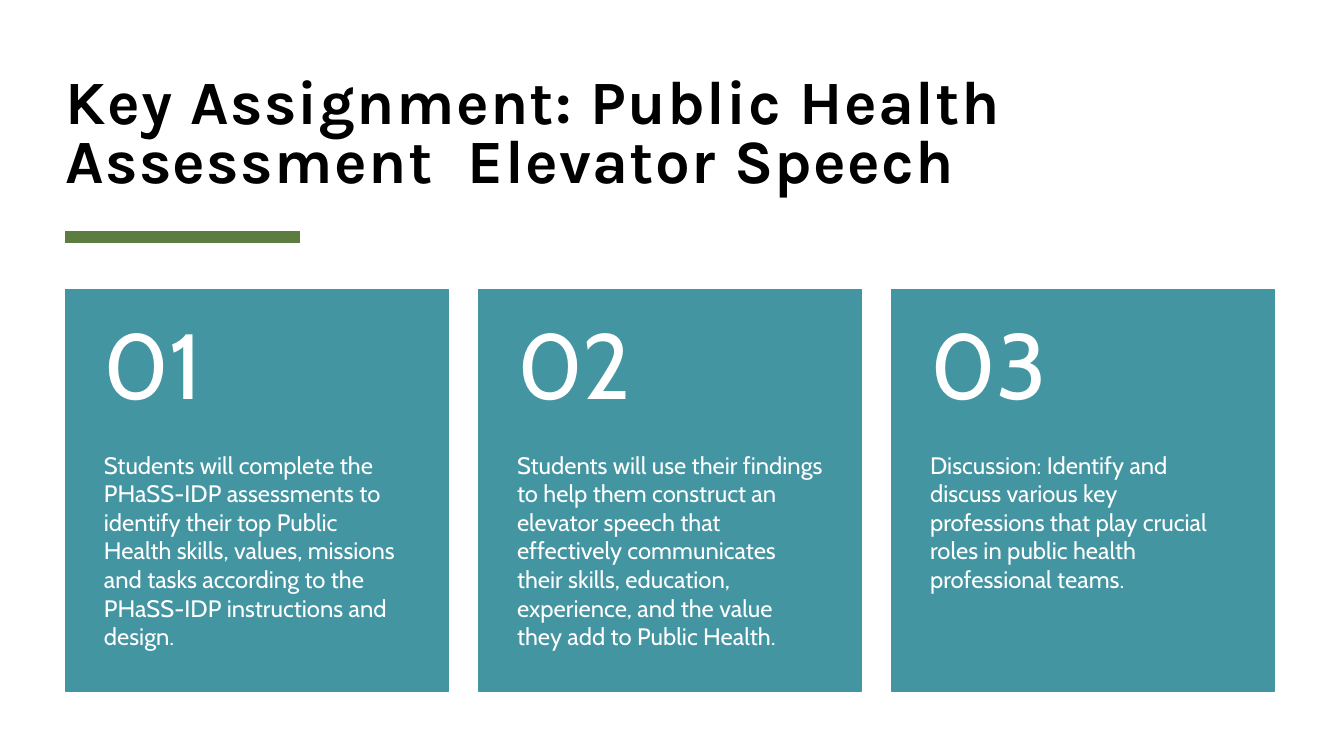
from dataclasses import dataclass

from lxml.etree import SubElement
from pptx import Presentation
from pptx.dml.color import RGBColor
from pptx.enum.shapes import MSO_CONNECTOR, MSO_SHAPE
from pptx.enum.text import MSO_ANCHOR as Anchor
from pptx.oxml.ns import qn
from pptx.slide import Slide
from pptx.text.text import _Paragraph as Paragraph
from pptx.util import Cm, Pt

TEAL, GREEN, WHITE, BLACK = "4495A2", "5D7D40", "FFFFFF", "000000"
LEFT, CARD_TOP, BODY_TOP = 1.65, 7.3, 11.35
CARD_W, CARD_H, CARD_STEP = 9.65, 10.11, 10.41


@dataclass
class TextStyle:
    font: str
    size: float
    color: str
    anchor: Anchor
    insets: tuple[float, float, float, float] = (0, 0, 0, 0)
    line_spacing: float = 1.0
    space_after: float = 0
    bold: bool = False


@dataclass
class Card:
    number: str
    body: str


TITLE = TextStyle("Karla", 44, BLACK, Anchor.BOTTOM, line_spacing=0.8, bold=True)
NUMBER = TextStyle("Cabin", 66, WHITE, Anchor.MIDDLE, (0.97, 0.46, 0.97, 0.46), 0.9, 23)
BODY = TextStyle("Cabin", 17, WHITE, Anchor.TOP, (0.97, 0, 0.97, 0.91), space_after=6)

CARDS = [
    Card("01", "Students will complete the PHaSS-IDP assessments to identify their top "
               "Public Health skills, values, missions and tasks according to the "
               "PHaSS-IDP instructions and design."),
    Card("02", "Students will use their findings to help them construct an elevator "
               "speech that effectively communicates their skills, education, "
               "experience, and the value they add to Public Health."),
    Card("03", "Discussion: Identify and discuss various key professions that play "
               "crucial roles in public health professional teams."),
]


def rgb(color: str) -> RGBColor:
    return RGBColor.from_string(color)


def add_text(s: Slide, text: str, x: float, y: float, w: float, h: float,
             style: TextStyle) -> Paragraph:
    tf = s.shapes.add_textbox(Cm(x), Cm(y), Cm(w), Cm(h)).text_frame
    tf.word_wrap = True
    tf.vertical_anchor = style.anchor
    tf.margin_left, tf.margin_top, tf.margin_right, tf.margin_bottom = map(Cm, style.insets)
    p = tf.paragraphs[0]
    p.text = text
    p.line_spacing = style.line_spacing
    p.space_after = Pt(style.space_after)
    p.font.name = style.font
    p.font.size = Pt(style.size)
    p.font.bold = style.bold
    p.font.color.rgb = rgb(style.color)
    return p


def add_title(s: Slide, text: str) -> None:
    p = add_text(s, text, LEFT, 0.56, 30.48, 4.37, TITLE)
    for r in p.runs:
        r._r.get_or_add_rPr().set("spc", "100")


def add_rule(s: Slide) -> None:
    line = s.shapes.add_connector(MSO_CONNECTOR.STRAIGHT, Cm(LEFT), Cm(5.97), Cm(7.57), Cm(5.97))
    line.line.color.rgb = rgb(GREEN)
    line.line.width = Pt(8)
    SubElement(line._element.spPr, qn("a:effectLst"))


def add_card(s: Slide, card: Card, x: float) -> None:
    sp = s.shapes.add_shape(MSO_SHAPE.RECTANGLE, Cm(x), Cm(CARD_TOP), Cm(CARD_W), Cm(CARD_H))
    sp.shadow.inherit = False
    sp.fill.solid()
    sp.fill.fore_color.rgb = rgb(TEAL)
    sp.line.color.rgb = rgb(TEAL)
    sp.line.width = Pt(1)
    add_text(s, card.body, x, BODY_TOP, CARD_W, CARD_TOP + CARD_H - BODY_TOP, BODY)
    add_text(s, card.number, x, CARD_TOP, CARD_W, BODY_TOP - CARD_TOP, NUMBER)


def main() -> None:
    prs = Presentation()
    prs.slide_width, prs.slide_height = Cm(33.87), Cm(19.05)
    s = prs.slides.add_slide(prs.slide_layouts[6])
    add_rule(s)
    add_title(s, "Key Assignment: Public Health Assessment  Elevator Speech")
    for i, card in enumerate(CARDS):
        add_card(s, card, LEFT + i * CARD_STEP)
    prs.save("out.pptx")


if __name__ == "__main__":
    main()
